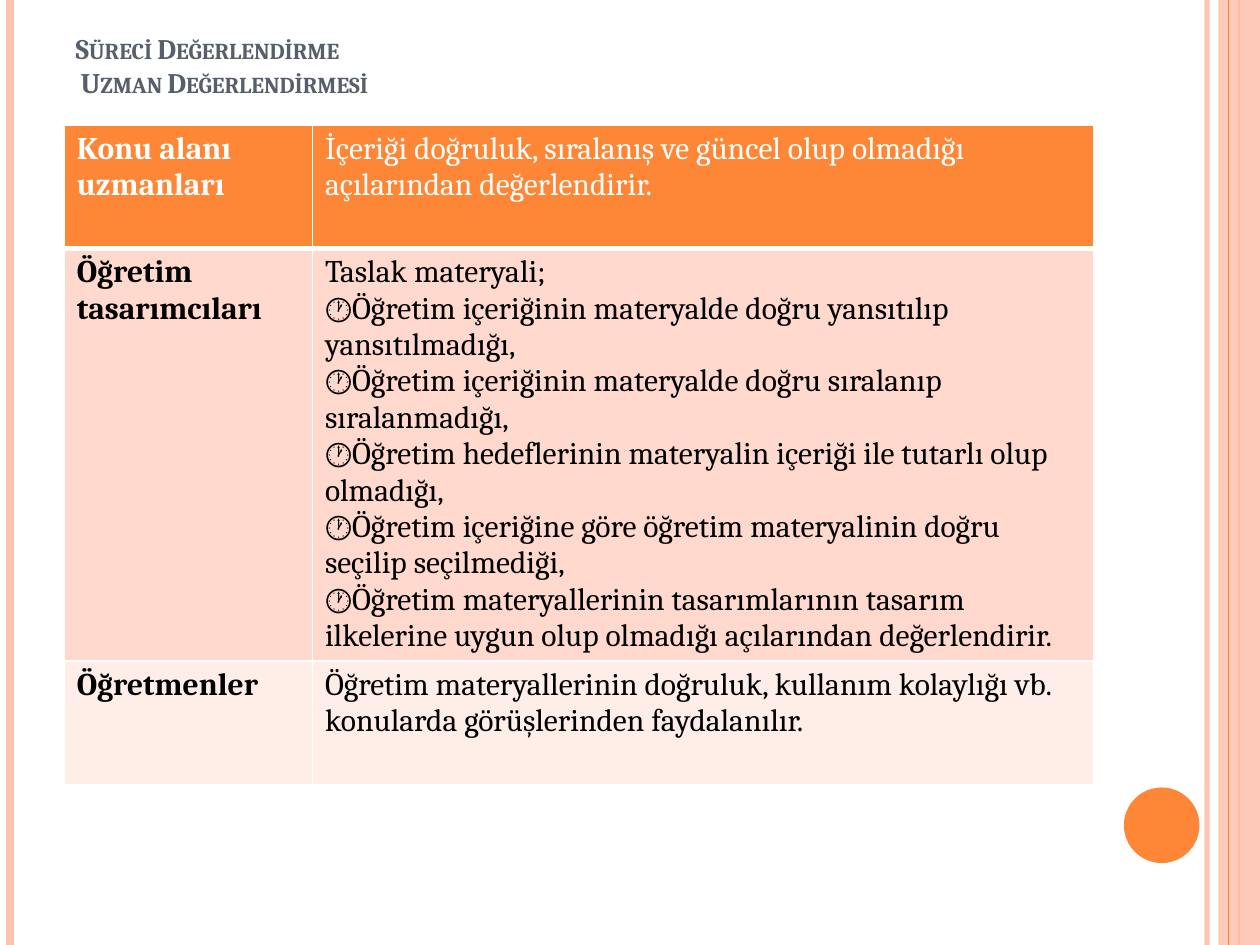
from dataclasses import dataclass

from lxml.etree import SubElement as Sub
from pptx import Presentation
from pptx.dml.color import RGBColor as Rgb
from pptx.enum.lang import MSO_LANGUAGE_ID as Lang
from pptx.enum.shapes import MSO_CONNECTOR as Link, MSO_SHAPE as Kind
from pptx.enum.text import MSO_ANCHOR as Anchor, MSO_AUTO_SIZE as Fit
from pptx.oxml.ns import qn
from pptx.util import Inches, Pt


@dataclass(frozen=True)
class Theme:
    face: str = "Cambria"
    slate: str = "575F6D"
    main: str = "FE8637"
    pale: str = "FEC3AE"
    white: str = "FFFFFF"
    black: str = "000000"
    rows: tuple = ("FE8637", "FFD9CE", "FFEDE8")
    head: float = 16.2
    body: float = 18


THEME = Theme()
TALL = 7.5

ROWS = [
    ("Konu alanı uzmanları",
     ["İçeriği doğruluk, sıralanış ve güncel olup olmadığı açılarından değerlendirir."]),
    ("Öğretim tasarımcıları",
     ["Taslak materyali;",
      "🕐Öğretim içeriğinin materyalde doğru yansıtılıp yansıtılmadığı,",
      "🕐Öğretim içeriğinin materyalde doğru sıralanıp sıralanmadığı,",
      "🕐Öğretim hedeflerinin materyalin içeriği ile tutarlı olup olmadığı,",
      "🕐Öğretim içeriğine göre öğretim materyalinin doğru seçilip seçilmediği,",
      "🕐Öğretim materyallerinin tasarımlarının tasarım ilkelerine uygun olup "
      "olmadığı açılarından değerlendirir."]),
    ("Öğretmenler",
     ["Öğretim materyallerinin doğruluk, kullanım kolaylığı vb. konularda "
      "görüşlerinden faydalanılır."]),
]


def style(font, hue, **form):
    for key, val in form.items():
        setattr(font, key, val)
    font.name = THEME.face
    font.language_id = Lang.TURKISH
    font.color.rgb = Rgb.from_string(hue)


def fade(shape, part):
    """Set the opacity, in percent, of the first colour in the shape."""
    tone = next(shape.element.spPr.iter(qn("a:srgbClr")))
    Sub(tone, qn("a:alpha"), val=str(part * 1000))


def add_rule(slide, left, hue, wide):
    x = Inches(left)
    rule = slide.shapes.add_connector(Link.STRAIGHT, x, 0, x, Inches(TALL))
    rule.line.color.rgb = Rgb.from_string(hue)
    rule.line.width = Pt(wide)
    Sub(rule.element.spPr, qn("a:effectLst"))
    return rule


def add_form(slide, kind, box, hue):
    form = slide.shapes.add_shape(kind, *map(Inches, box))
    form.shadow.inherit = False
    form.fill.solid()
    form.fill.fore_color.rgb = Rgb.from_string(hue)
    form.line.fill.background()
    return form


def add_frame(slide):
    band = add_form(slide, Kind.RECTANGLE, (9.67, 0, 0.33, TALL), THEME.pale)
    fade(band, 87)
    fade(add_rule(slide, 9.58, THEME.pale, 3), 93)
    add_rule(slide, 0.08, THEME.pale, 4.5)
    axis = add_rule(slide, 9.83, THEME.main, 1.5)
    axis.begin_connect(band, 0)
    axis.end_connect(band, 2)
    # The band lies over its axis
    slide.shapes.element.append(band.element)
    add_rule(slide, 9.75, THEME.main, 0.75)
    add_form(slide, Kind.OVAL, (8.92, 6.25, 0.6, 0.6), THEME.main)


def set_title(slide, text):
    title = slide.shapes.title
    box = dict(left=0.5, top=0.3, width=8.17, height=0.54)
    for key, val in box.items():
        setattr(title, key, Inches(val))
    frame = title.text_frame
    form = dict(text=text, word_wrap=True, auto_size=Fit.NONE,
                vertical_anchor=Anchor.BOTTOM)
    for key, val in form.items():
        setattr(frame, key, val)
    para = frame.paragraphs[0]
    para.line_spacing = 1.0
    para.alignment = 1
    for run in para.runs:
        style(run.font, THEME.slate, size=Pt(THEME.head), bold=True)
        run.font._element.set("cap", "small")


def add_edges(cell, wide):
    """Draw white cell borders; wide maps a side to its points."""
    props = cell._tc.get_or_add_tcPr()
    for side in "LRTB":
        edge = Sub(props, qn(f"a:ln{side}"), w=str(Pt(wide.get(side, 1))))
        fill = Sub(edge, qn("a:solidFill"))
        Sub(fill, qn("a:srgbClr"), val=THEME.white)


def fill_cell(cell, lines, back, hue, bold, wide):
    add_edges(cell, wide)
    cell.fill.solid()
    cell.fill.fore_color.rgb = Rgb.from_string(back)
    cell.text = "\n".join(lines)
    for para in cell.text_frame.paragraphs:
        for run in para.runs:
            style(run.font, hue, size=Pt(THEME.body), bold=bold)


def add_grid(slide):
    cols, tall = (1.97, 6.2), (0.98, 3.26, 0.98)
    box = map(Inches, (0.51, 0.99, sum(cols), sum(tall)))
    grid = slide.shapes.add_table(len(ROWS), len(cols), *box).table
    for col, size in zip(grid.columns, cols):
        col.width = Inches(size)
    for row, size in zip(grid.rows, tall):
        row.height = Inches(size)
    for i, (name, lines) in enumerate(ROWS):
        hue = THEME.black if i else THEME.white
        # A thick rule parts the header from the rows below
        wide = ({"B": 3}, {"T": 3}, {})[i]
        for j, text in enumerate(([name], lines)):
            fill_cell(grid.cell(i, j), text, THEME.rows[i], hue, j == 0, wide)


def main():
    deck = Presentation()
    deck.slide_width, deck.slide_height = Inches(10), Inches(TALL)
    slide = deck.slides.add_slide(deck.slide_layouts[5])
    # Side bands and dot
    add_frame(slide)
    # Heading
    set_title(slide, "Süreci Değerlendirme\v Uzman Değerlendirmesi")
    # Table of experts
    add_grid(slide)
    deck.save("out.pptx")


if __name__ == "__main__":
    main()
